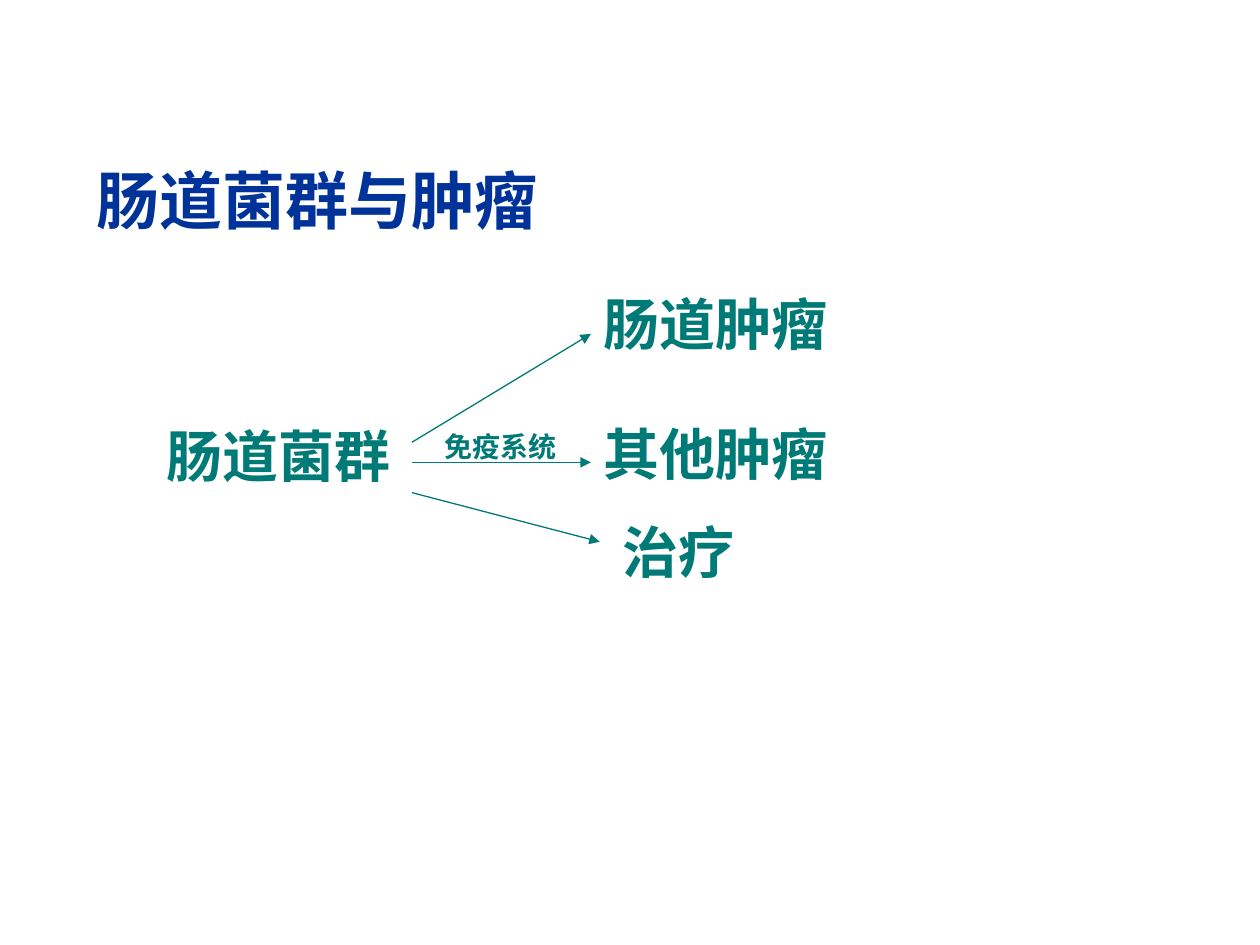
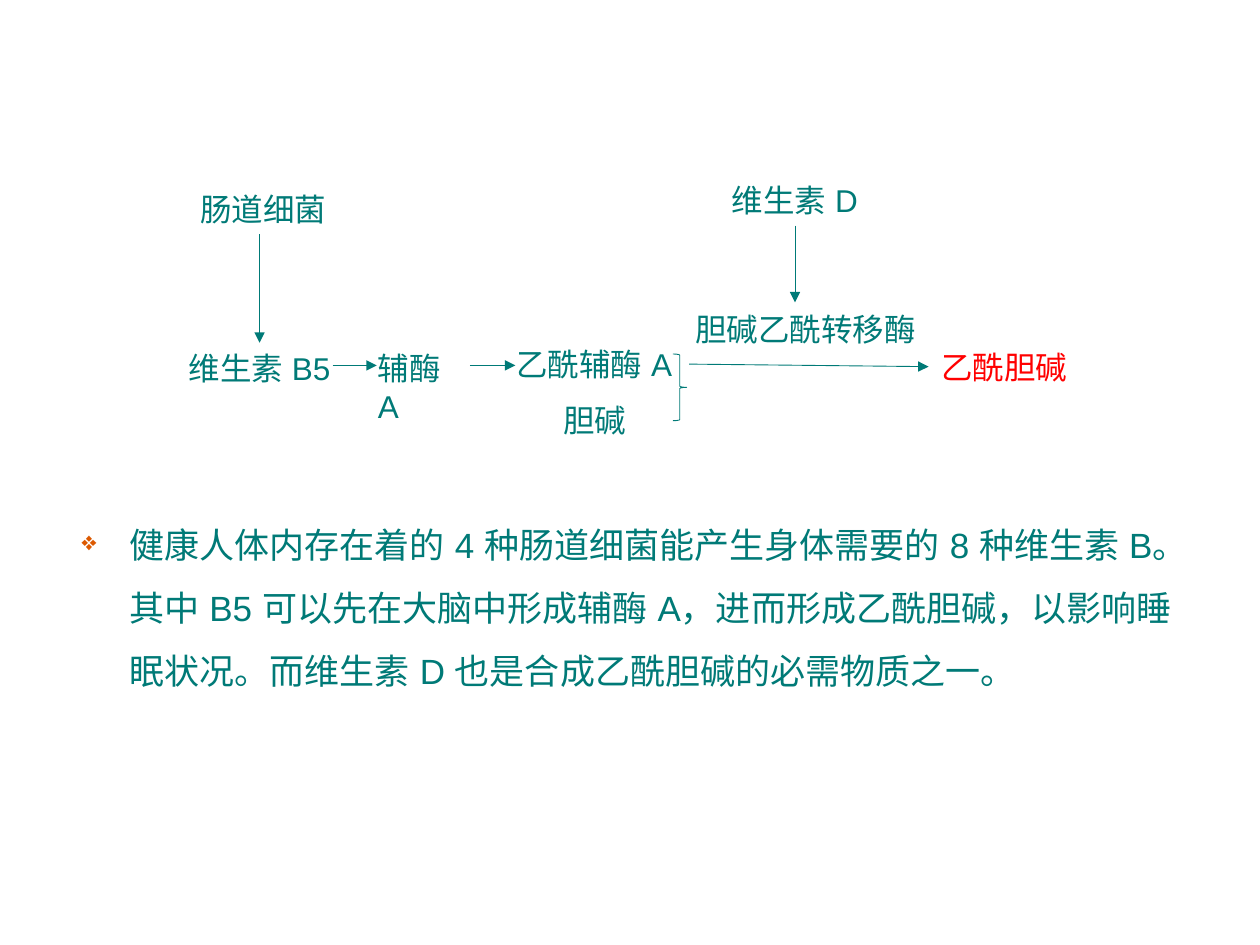
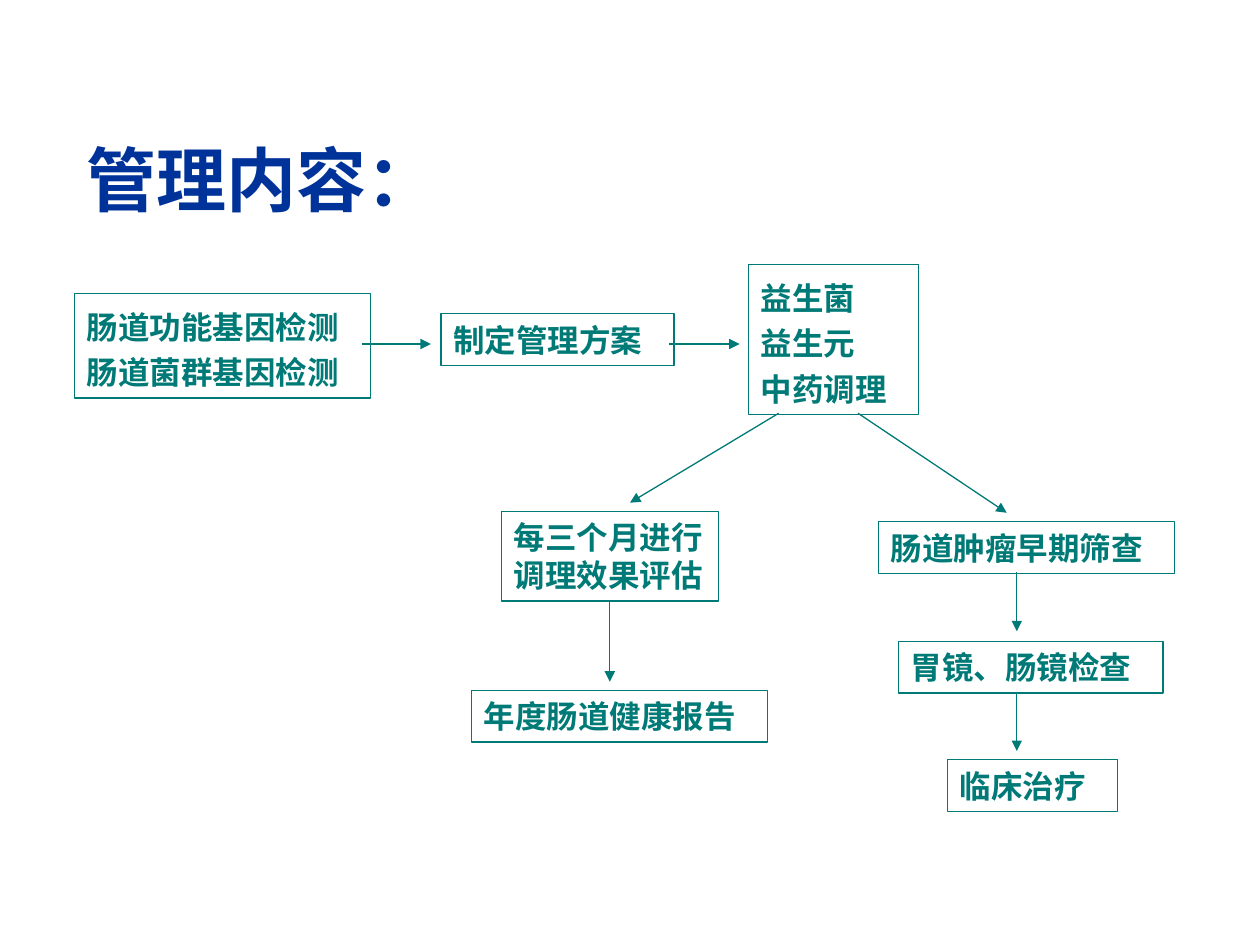
import dataclasses

import lxml.etree
import pptx
import pptx.dml.color
import pptx.enum.lang
import pptx.enum.shapes
import pptx.enum.text
import pptx.oxml.ns
import pptx.util
from pptx.util import Inches

TEAL, NAVY, RED, ORANGE = "007A77", "003399", "FF0000", "DC5900"
LATIN, CHINESE = "Arial", "Noto Sans CJK SC"


def rgb(value):
    return pptx.dml.color.RGBColor.from_string(value)


def add_element(parent, tag, **attributes):
    element = lxml.etree.SubElement(parent, pptx.oxml.ns.qn(tag))
    for name, value in attributes.items():
        element.set(name, value)
    return element


def style_run(run, size, color, bold, font):
    run.font.size = pptx.util.Pt(size)
    run.font.bold = bold
    run.font.color.rgb = rgb(color)
    run.font.name = font
    run.font.language_id = pptx.enum.lang.MSO_LANGUAGE_ID.SIMPLIFIED_CHINESE
    add_element(run.font._element, "a:ea", typeface=LATIN)


def fill_text(shape, text, size, color=TEAL, bold=False, font=LATIN,
              spacing=None, middle=False):
    frame = shape.text_frame
    frame.word_wrap = True
    anchors = pptx.enum.text.MSO_ANCHOR
    frame.vertical_anchor = anchors.MIDDLE if middle else anchors.TOP
    frame.text = text
    for paragraph in frame.paragraphs:
        paragraph.alignment = pptx.enum.text.PP_ALIGN.LEFT
        if spacing:
            paragraph.line_spacing = spacing
        for run in paragraph.runs:
            style_run(run, size, color, bold, font)


@dataclasses.dataclass
class Region:
    """An area of a slide; its parts are placed relative to its corner."""
    slide: object
    left: float
    top: float

    def place(self, x, y):
        return Inches(self.left + x), Inches(self.top + y)

    def text(self, x, y, width, height, text, size, **style):
        box = self.slide.shapes.add_textbox(
            *self.place(x, y), Inches(width), Inches(height))
        fill_text(box, text, size, **style)
        return box

    def outline(self, kind, x, y, width, height, weight):
        shape = self.slide.shapes.add_shape(
            kind, *self.place(x, y), Inches(width), Inches(height))
        shape.shadow.inherit = False
        shape.fill.background()
        shape.line.color.rgb = rgb(TEAL)
        shape.line.width = pptx.util.Pt(weight)
        return shape

    def arrow(self, start, end, weight=0.75):
        connector = self.slide.shapes.add_connector(
            pptx.enum.shapes.MSO_CONNECTOR.STRAIGHT,
            *self.place(*start), *self.place(*end))
        connector.line.color.rgb = rgb(TEAL)
        connector.line.width = pptx.util.Pt(weight)
        add_element(connector.line._get_or_add_ln(), "a:tailEnd", type="triangle")
        add_element(connector._element.spPr, "a:effectLst")


def add_title(slide, left, top, width, height, text, size):
    return Region(slide, left, top).text(
        0, 0, width, height, text, size, color=NAVY, bold=True,
        font=CHINESE, middle=True)


# Slide 1: flora leading to three outcomes
def tumor_diagram(slide, left, top):
    region = Region(slide, left, top)
    labels = [
        (0, 1.11, 2.52, "肠道菌群", 0.9),
        (3.47, 0, 3.62, "肠道肿瘤", None),
        (3.47, 1.03, 3.23, "其他肿瘤", None),
        (3.62, 1.81, 1.73, "治疗", None),
    ]
    for x, y, width, text, spacing in labels:
        region.text(x, y, width, 0.63, text, 32, bold=True, spacing=spacing)
    region.text(2.21, 1.11, 1.42, 0.37, "免疫系统", 16, bold=True)
    for start_y, end in [(1.26, (3.47, 0.4)), (1.42, (3.47, 1.42)),
                         (1.66, (3.54, 2.05))]:
        region.arrow((2.05, start_y), end)


# Slide 2: synthesis pathway and its explanation
def synthesis_pathway(slide, left, top):
    region = Region(slide, left, top)
    labels = [
        (0.09, 0.07, 1.21, "肠道细菌", TEAL),
        (0, 1.33, 1.34, "维生素 B5", TEAL),
        (1.5, 1.33, 0.93, "辅酶 A", TEAL),
        (2.6, 1.3, 1.44, "乙酰辅酶 A", TEAL),
        (2.97, 1.74, 0.71, "胆碱", TEAL),
        (4.31, 0, 1.21, "维生素 D", TEAL),
        (4.02, 1.02, 2, "胆碱乙酰转移酶", TEAL),
        (5.97, 1.32, 1.21, "乙酰胆碱", RED),
    ]
    for x, y, width, text, color in labels:
        region.text(x, y, width, 0.4, text, 18, color=color)
    arrows = [
        ((0.66, 0.47), (0.66, 1.33)),
        ((1.24, 1.51), (1.59, 1.51)),
        ((2.33, 1.51), (2.69, 1.51)),
        ((4.07, 1.5), (5.97, 1.52)),
        ((4.91, 0.4), (4.91, 1.01)),
    ]
    for start, end in arrows:
        region.arrow(start, end, weight=0.5)
    region.outline(pptx.enum.shapes.MSO_SHAPE.RIGHT_BRACE,
                   3.94, 1.42, 0.11, 0.53, 0.5)


def bullet_note(slide, left, top, width, height, text):
    box = Region(slide, left, top).text(0, 0, width, height, "", 20)
    paragraph = box.text_frame.paragraphs[0]
    paragraph.line_spacing = 1.5
    properties = paragraph._element.get_or_add_pPr()
    properties.set("marL", str(Inches(0.38)))
    properties.set("indent", str(Inches(-0.38)))
    color = add_element(properties, "a:buClr")
    add_element(color, "a:srgbClr", val=ORANGE)
    add_element(properties, "a:buSzPct", val="75000")
    add_element(properties, "a:buChar", char="❖")
    run = paragraph.add_run()
    run.text = text
    style_run(run, 20, TEAL, False, LATIN)


# Slide 3: management flow chart
def management_flow(slide, left, top):
    region = Region(slide, left, top)
    steps = [
        (0, 0.23, 2.35, 0.83, "肠道功能基因检测\n肠道菌群基因检测", 1.2),
        (2.91, 0.39, 1.85, 0.41, "制定管理方案", None),
        (5.35, 0, 1.35, 1.19, "益生菌\n益生元\n中药调理", 1.2),
        (3.39, 1.96, 1.72, 0.71, "每三个月进行\n调理效果评估", None),
        (3.15, 3.38, 2.35, 0.41, "年度肠道健康报告", None),
        (6.38, 2.04, 2.35, 0.41, "肠道肿瘤早期筛查", None),
        (6.54, 2.99, 2.1, 0.41, "胃镜、肠镜检查", None),
        (6.93, 3.93, 1.35, 0.41, "临床治疗", None),
    ]
    for x, y, width, height, text, spacing in steps:
        box = region.outline(pptx.enum.shapes.MSO_SHAPE.RECTANGLE,
                             x, y, width, height, 0.75)
        fill_text(box, text, 18, bold=True, font=CHINESE,
                  spacing=spacing, middle=True)
    arrows = [
        ((2.28, 0.63), (2.83, 0.63)),
        ((4.72, 0.63), (5.28, 0.63)),
        ((5.59, 1.18), (4.41, 1.89)),
        ((6.22, 1.18), (7.4, 1.97)),
        ((4.25, 2.68), (4.25, 3.31)),
        ((7.48, 2.44), (7.48, 2.91)),
        ((7.48, 3.39), (7.48, 3.86)),
    ]
    for start, end in arrows:
        region.arrow(start, end)


def main():
    presentation = pptx.Presentation()
    presentation.slide_width = Inches(10)
    presentation.slide_height = Inches(7.5)
    blank = presentation.slide_layouts[6]
    tumor, synthesis, management = (
        presentation.slides.add_slide(blank) for _ in range(3))

    add_title(tumor, 0.67, 1.15, 7.09, 0.86, "肠道菌群与肿瘤", 36)
    tumor_diagram(tumor, 1.22, 2.25)

    bullet_note(synthesis, 0.55, 3.94, 9.06, 2.69,
                "健康人体内存在着的 4 种肠道细菌能产生身体需要的 8 种维生素 B。"
                "其中 B5 可以先在大脑中形成辅酶 A，进而形成乙酰胆碱，"
                "以影响睡眠状况。而维生素 D 也是合成乙酰胆碱的必需物质之一。")
    synthesis_pathway(synthesis, 1.4, 1.39)

    title = add_title(management, 0.59, 1.07, 6.94, 0.7, "管理", 40)
    ending = title.text_frame.paragraphs[0].add_run()
    ending.text = "内容："
    style_run(ending, 40, NAVY, True, LATIN)
    management_flow(management, 0.59, 2.1)

    presentation.save("out.pptx")


if __name__ == "__main__":
    main()
